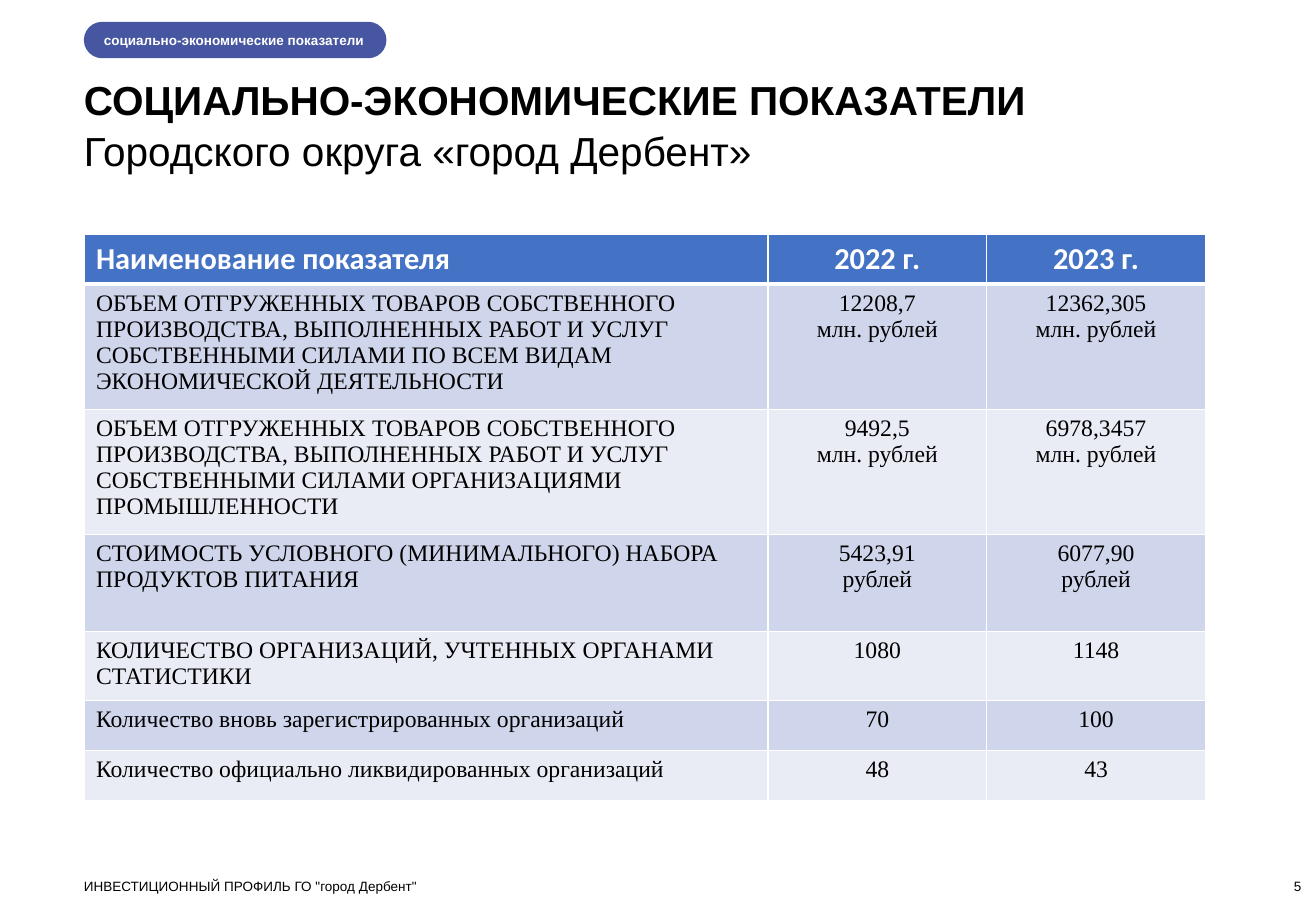
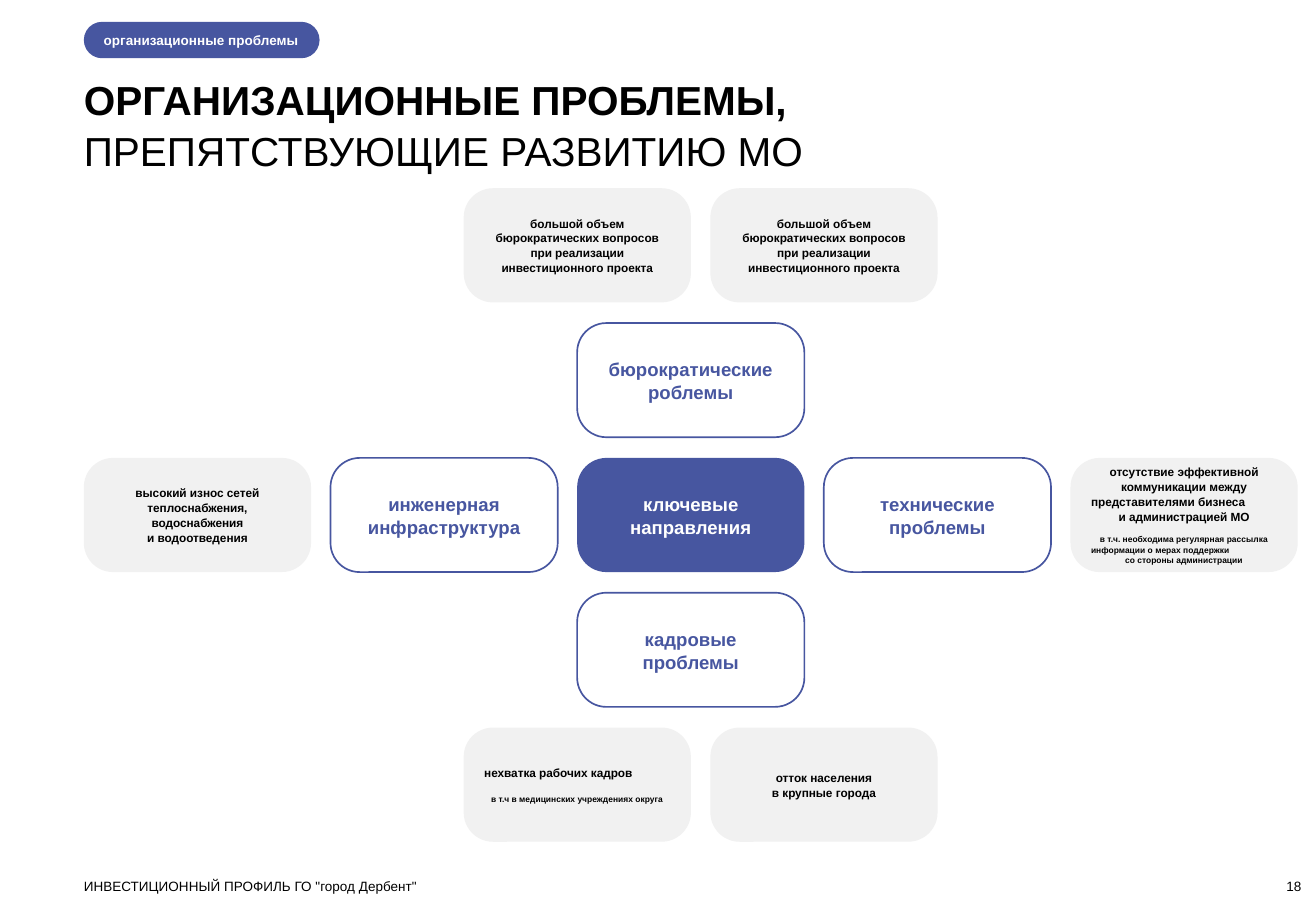
import dataclasses

import lxml.etree
import pptx
import pptx.dml.color
import pptx.enum.shapes
import pptx.enum.text
import pptx.oxml.ns
import pptx.util

Inches = pptx.util.Inches
Pt = pptx.util.Pt
RGBColor = pptx.dml.color.RGBColor
Align = pptx.enum.text.PP_ALIGN
Anchor = pptx.enum.text.MSO_ANCHOR
qn = pptx.oxml.ns.qn

INDIGO = RGBColor(0x47, 0x56, 0xA0)
TABLE_BLUE = RGBColor(0x44, 0x72, 0xC4)
BAND_DARK = RGBColor(0xCF, 0xD5, 0xEA)
BAND_LIGHT = RGBColor(0xE9, 0xEB, 0xF5)
GRAY = RGBColor(0xF1, 0xF1, 0xF1)
WHITE = RGBColor(0xFF, 0xFF, 0xFF)
BLACK = RGBColor(0x00, 0x00, 0x00)

LEFT = 0.69
FOOTER = 'ИНВЕСТИЦИОННЫЙ ПРОФИЛЬ ГО "город Дербент"'


@dataclasses.dataclass
class Line:
    """One paragraph; gap is the space before it in points."""
    text: str
    size: float = 7
    bold: bool = True
    align: Align = Align.CENTER
    gap: float = 0


class Deck:
    """Holds the shared style and the slide being built."""

    def __init__(self):
        self.presentation = pptx.Presentation()
        self.presentation.slide_width = Inches(10.83)
        self.presentation.slide_height = Inches(7.5)
        self.slide = None

    def start_slide(self, tag, tag_width, title_lines, number):
        layout = self.presentation.slide_layouts[5]
        self.slide = self.presentation.slides.add_slide(layout)
        self.title(*title_lines)
        self.tag(tag, tag_width)
        self.footer_text(FOOTER, LEFT, 8, Align.LEFT)
        self.footer_text(number, 9.91, 0.8, Align.RIGHT)

    def fill_text(self, frame, lines, color, font="Arial", spacing=None):
        for index, line in enumerate(lines):
            paragraph = frame.add_paragraph() if index else frame.paragraphs[0]
            paragraph.text = line.text
            paragraph.alignment = line.align
            paragraph.space_before = Pt(line.gap)
            if spacing:
                paragraph.line_spacing = spacing
            paragraph.font.name = font
            paragraph.font.size = Pt(line.size)
            paragraph.font.bold = line.bold
            paragraph.font.color.rgb = color

    def set_frame(self, frame, anchor, left_inset=0):
        frame.word_wrap = True
        frame.auto_size = pptx.enum.text.MSO_AUTO_SIZE.NONE
        frame.vertical_anchor = anchor
        frame.margin_left = Inches(left_inset)
        frame.margin_top = frame.margin_right = frame.margin_bottom = 0

    def title(self, strong, plain):
        title = self.slide.shapes.title
        title.left, title.top = Inches(LEFT), Inches(0.6)
        title.width, title.height = Inches(10.02), Inches(0.81)
        self.set_frame(title.text_frame, Anchor.TOP)
        lines = [Line(strong, 24, True, Align.LEFT), Line(plain, 24, False, Align.LEFT)]
        self.fill_text(title.text_frame, lines, BLACK, spacing=1.05)

    def footer_text(self, text, left, width, align):
        footer = self.slide.shapes.add_textbox(
            Inches(left), Inches(7.23), Inches(width), Inches(0.13))
        self.set_frame(footer.text_frame, Anchor.TOP)
        self.fill_text(footer.text_frame, [Line(text, 8, False, align)], BLACK)

    def rounded(self, left, top, width, height, radius, fill, outline=None):
        panel = self.slide.shapes.add_shape(
            pptx.enum.shapes.MSO_SHAPE.ROUNDED_RECTANGLE,
            Inches(left), Inches(top), Inches(width), Inches(height))
        panel.adjustments[0] = radius
        panel.shadow.inherit = False
        if fill is None:
            panel.fill.background()
        else:
            panel.fill.solid()
            panel.fill.fore_color.rgb = fill
        if outline is None:
            panel.line.fill.background()
        else:
            panel.line.color.rgb = outline
            panel.line.width = Pt(1)
        return panel

    def tag(self, text, width):
        tag = self.rounded(LEFT, 0.18, width, 0.3, 0.5, INDIGO)
        self.set_frame(tag.text_frame, Anchor.MIDDLE, 0.12)
        self.fill_text(tag.text_frame, [Line(text, 8, True, Align.LEFT)], WHITE)

    def card(self, column, row, lines, fill, color, outline=None):
        """Place a card on the diagram grid; a column may be fractional."""
        card = self.rounded(LEFT + 2.03 * column, 1.55 + 1.11 * row,
                            1.87, 0.94, 0.256, fill, outline)
        card.text_frame.word_wrap = True
        card.text_frame.vertical_anchor = Anchor.MIDDLE
        self.fill_text(card.text_frame, lines, color, spacing=1.05)

    def table(self, rows, widths, heights):
        table = self.slide.shapes.add_table(
            len(rows), len(widths), Inches(LEFT), Inches(1.93),
            Inches(sum(widths)), Inches(sum(heights))).table
        for column, width in zip(table.columns, widths):
            column.width = Inches(width)
        for r, (values, height) in enumerate(zip(rows, heights)):
            table.rows[r].height = Inches(height)
            for c, value in enumerate(values):
                cell = table.cell(r, c)
                align = Align.CENTER if c else Align.LEFT
                self.cell_borders(cell, top=3 if r == 1 else 1, bottom=1 if r else 3)
                cell.fill.solid()
                if r == 0:
                    cell.fill.fore_color.rgb = TABLE_BLUE
                    self.fill_text(cell.text_frame, [Line(value, 18, True, align)],
                                   WHITE, "Calibri")
                else:
                    cell.fill.fore_color.rgb = BAND_DARK if r % 2 else BAND_LIGHT
                    self.fill_text(cell.text_frame, [Line(value, 14, False, align)],
                                   BLACK, "Times New Roman")

    def cell_borders(self, cell, top, bottom):
        """Add white borders; must run before the cell is filled."""
        properties = cell._tc.get_or_add_tcPr()
        for edge, width in (("lnL", 1), ("lnR", 1), ("lnT", top), ("lnB", bottom)):
            border = lxml.etree.SubElement(properties, qn(f"a:{edge}"), w=str(Pt(width)))
            fill = lxml.etree.SubElement(border, qn("a:solidFill"))
            lxml.etree.SubElement(fill, qn("a:srgbClr"), val=str(WHITE))


def indicators_slide(deck):
    deck.start_slide(
        "социально-экономические показатели", 2.49,
        ("СОЦИАЛЬНО-ЭКОНОМИЧЕСКИЕ ПОКАЗАТЕЛИ", "Городского округа «город Дербент»"), "5")
    shipped = ("ОБЪЕМ ОТГРУЖЕННЫХ ТОВАРОВ СОБСТВЕННОГО ПРОИЗВОДСТВА, "
               "ВЫПОЛНЕННЫХ РАБОТ И УСЛУГ СОБСТВЕННЫМИ СИЛАМИ ")
    rows = [
        ("Наименование показателя", "2022 г.", "2023 г."),
        (shipped + "ПО ВСЕМ ВИДАМ ЭКОНОМИЧЕСКОЙ ДЕЯТЕЛЬНОСТИ",
         "12208,7\vмлн. рублей", "12362,305\vмлн. рублей"),
        (shipped + "ОРГАНИЗАЦИЯМИ ПРОМЫШЛЕННОСТИ",
         "9492,5\vмлн. рублей", "6978,3457\vмлн. рублей"),
        ("СТОИМОСТЬ УСЛОВНОГО (МИНИМАЛЬНОГО) НАБОРА ПРОДУКТОВ ПИТАНИЯ",
         "5423,91\vрублей", "6077,90\vрублей"),
        ("КОЛИЧЕСТВО ОРГАНИЗАЦИЙ, УЧТЕННЫХ ОРГАНАМИ СТАТИСТИКИ", "1080", "1148"),
        ("Количество вновь зарегистрированных организаций", "70", "100"),
        ("Количество официально ликвидированных организаций", "48", "43"),
    ]
    deck.table(rows, [5.63, 1.8, 1.8], [0.41, 1.03, 1.03, 0.8, 0.57, 0.41, 0.41])


def problems_slide(deck):
    deck.start_slide(
        "организационные проблемы", 1.94,
        ("ОРГАНИЗАЦИОННЫЕ ПРОБЛЕМЫ,", "ПРЕПЯТСТВУЮЩИЕ РАЗВИТИЮ МО"), "18")

    deck.card(2, 2, [Line("ключевые направления", 11)], INDIGO, WHITE)
    directions = [
        (2, 1, "бюрократические роблемы"),
        (1, 2, "инженерная инфраструктура"),
        (3, 2, "технические проблемы"),
        (2, 3, "кадровые проблемы"),
    ]
    for column, row, text in directions:
        deck.card(column, row, [Line(text, 11)], None, INDIGO, INDIGO)

    bureaucracy = [Line("большой объем бюрократических вопросов "
                        "при реализации инвестиционного проекта")]
    details = [
        (1.54, 0, bureaucracy),
        (2.54, 0, bureaucracy),
        (0, 2, [Line("высокий износ сетей теплоснабжения, водоснабжения"),
                Line("и водоотведения")]),
        (4, 2, [Line("отсутствие эффективной"),
                Line("коммуникации между"),
                Line("представителями бизнеса", align=Align.LEFT),
                Line("и администрацией МО"),
                Line("в т.ч. необходима регулярная рассылка", 5, gap=6),
                Line("информации о мерах поддержки", 5, align=Align.LEFT),
                Line("со стороны администрации", 5)]),
        (1.54, 4, [Line("нехватка рабочих кадров", align=Align.LEFT),
                   Line("в т.ч в медицинских учреждениях округа", 5, gap=8.5)]),
        (2.54, 4, [Line("отток населения"), Line("в крупные города")]),
    ]
    for column, row, lines in details:
        deck.card(column, row, lines, GRAY, BLACK)


def main():
    deck = Deck()
    indicators_slide(deck)
    problems_slide(deck)
    deck.presentation.save("out.pptx")


if __name__ == "__main__":
    main()
